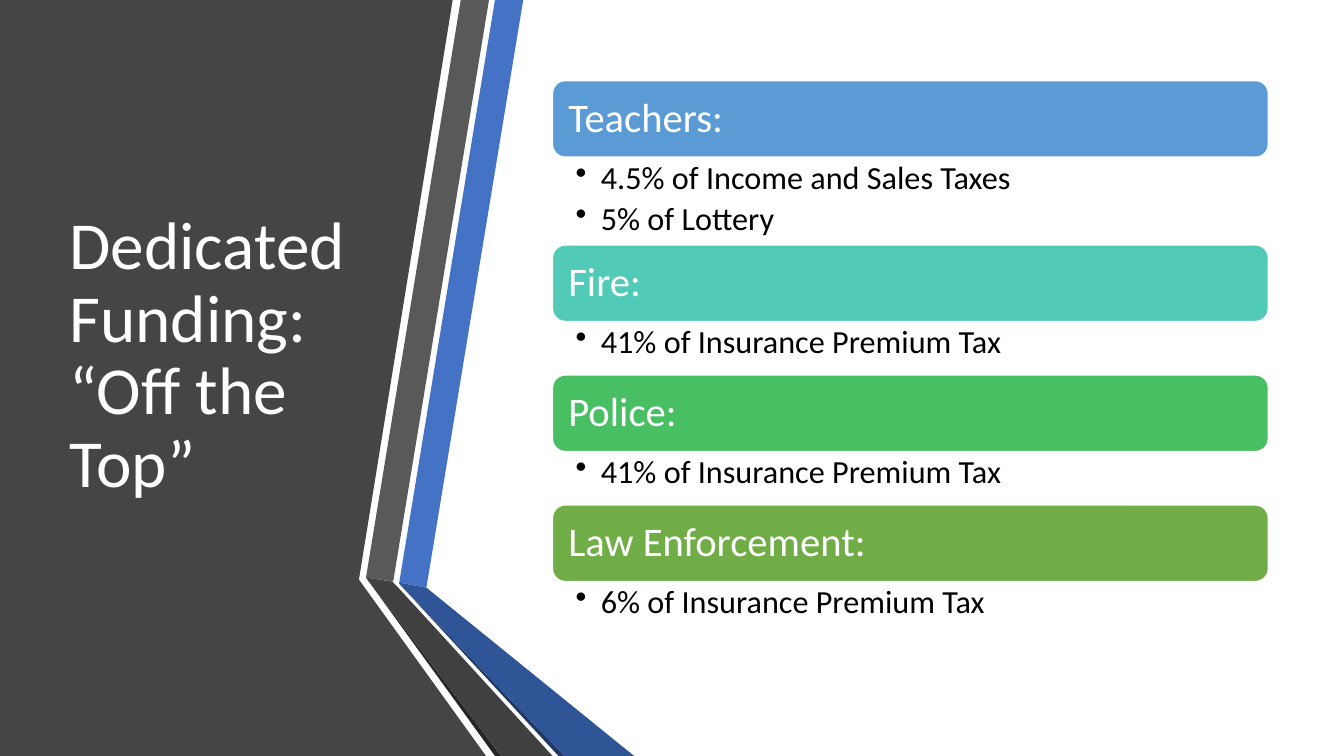
import pptx
import pptx.util
import pptx.dml.color
import pptx.enum.shapes
import pptx.enum.text
import pptx.oxml.ns
from lxml import etree

Inches = pptx.util.Inches
Pt = pptx.util.Pt

FONT = "Calibri"
COLORS = {
    "white": "FFFFFF", "black": "000000", "panel": "454545",
    "blue": "4472C4", "blue_fold": "2F5597", "blue_edge": "203864",
    "gray": "595959", "gray_fold": "404040", "gray_edge": "262626",
    "teachers": "5B9BD5", "fire": "52CAB8", "police": "49BF64", "law": "70AD47",
}

# Outlines of the side panel and its folded ribbons, in inches, back to front
PANEL = [("panel", [(0, 0), (4.49, 0), (3.56, 5.75), (4.82, 7.5), (0, 7.5)])]
RIBBONS = [
    ("blue", [(3.96, 5.78), (4.23, 5.83), (5.19, 0), (4.91, 0)]),
    ("gray", [(4.85, 0), (4.57, 0), (3.63, 5.73), (3.9, 5.77)]),
    ("gray_edge", [(3.63, 5.73), (4.91, 7.5), (4.97, 7.5)]),
    ("blue_edge", [(3.96, 5.79), (5.54, 7.5), (5.6, 7.5)]),
    ("blue_fold", [(3.96, 5.79), (5.6, 7.5), (6.29, 7.5), (4.23, 5.83), (3.96, 5.78)]),
    ("gray_fold", [(5.48, 7.5), (3.95, 5.83), (3.89, 5.77), (3.63, 5.73), (4.97, 7.5)]),
]

# Heading, colour, bullets, height of the bullet area
FUNDS = [
    ("Teachers:", "teachers", ["4.5% of Income and Sales Taxes", "5% of Lottery"], 0.87),
    ("Fire:", "fire", ["41% of Insurance Premium Tax"], 0.53),
    ("Police:", "police", ["41% of Insurance Premium Tax"], 0.53),
    ("Law Enforcement:", "law", ["6% of Insurance Premium Tax"], 0.53),
]
BAR_HEIGHT = 0.76


def rgb(name):
    return pptx.dml.color.RGBColor.from_string(COLORS[name])


def style_paragraph(paragraph, size, color):
    paragraph.font.name = FONT
    paragraph.font.size = Pt(size)
    paragraph.font.color.rgb = rgb(color)
    paragraph.alignment = pptx.enum.text.PP_ALIGN.LEFT
    paragraph.line_spacing = 0.9


def set_frame(frame, side, vertical, anchor):
    frame.word_wrap = True
    frame.auto_size = pptx.enum.text.MSO_AUTO_SIZE.NONE
    frame.margin_left = frame.margin_right = Inches(side)
    frame.margin_top = frame.margin_bottom = Inches(vertical)
    frame.vertical_anchor = anchor


def add_bullet(paragraph):
    properties = paragraph._p.get_or_add_pPr()
    properties.set("marL", str(Inches(0.25)))
    properties.set("indent", str(-Inches(0.25)))
    bullet = etree.SubElement(properties, pptx.oxml.ns.qn("a:buChar"))
    bullet.set("char", "•")
    # The bullet has to come before the default run properties
    defaults = properties.find(pptx.oxml.ns.qn("a:defRPr"))
    if defaults is not None:
        defaults.addprevious(bullet)


def add_outlines(shapes, outlines):
    for color, points in outlines:
        corners = [(Inches(x), Inches(y)) for x, y in points]
        builder = shapes.build_freeform(*corners[0])
        builder.add_line_segments(corners[1:], close=True)
        shape = builder.convert_to_shape()
        shape.shadow.inherit = False
        shape.fill.solid()
        shape.fill.fore_color.rgb = rgb(color)
        shape.line.fill.background()


def add_side_panel(slide):
    add_outlines(slide.shapes, PANEL)
    add_outlines(slide.shapes.add_group_shape().shapes, RIBBONS)


def place_title(slide, left, top, width, height):
    title = slide.shapes.title
    title.left, title.top = Inches(left), Inches(top)
    title.width, title.height = Inches(width), Inches(height)
    title.text_frame.text = "Dedicated Funding: “Off the Top”"
    set_frame(title.text_frame, 0.1, 0.05, pptx.enum.text.MSO_ANCHOR.MIDDLE)
    style_paragraph(title.text_frame.paragraphs[0], 48, "white")
    # Bring the title in front of the panel
    slide.shapes._spTree.append(title._element)


def add_heading_bar(slide, text, color, left, top, width):
    bar = slide.shapes.add_shape(
        pptx.enum.shapes.MSO_SHAPE.ROUNDED_RECTANGLE,
        Inches(left), Inches(top), Inches(width), Inches(BAR_HEIGHT))
    bar.shadow.inherit = False
    bar.fill.solid()
    bar.fill.fore_color.rgb = rgb(color)
    bar.line.color.rgb = rgb("white")
    bar.line.width = Pt(1)
    bar.text_frame.text = text
    set_frame(bar.text_frame, 0.12, 0.05, pptx.enum.text.MSO_ANCHOR.MIDDLE)
    style_paragraph(bar.text_frame.paragraphs[0], 29, "white")


def add_bullets(slide, lines, left, top, width, height):
    box = slide.shapes.add_textbox(
        Inches(left), Inches(top), Inches(width), Inches(height))
    box.text_frame.text = "\n".join(lines)
    set_frame(box.text_frame, 0.23, 0.04, pptx.enum.text.MSO_ANCHOR.TOP)
    for paragraph in box.text_frame.paragraphs:
        style_paragraph(paragraph, 23, "black")
        paragraph.space_after = Pt(4.6)
        add_bullet(paragraph)


def add_fund_list(slide, left, top, width):
    for heading, color, lines, height in FUNDS:
        add_heading_bar(slide, heading, color, left, top, width)
        add_bullets(slide, lines, left, top + BAR_HEIGHT, width, height)
        top += BAR_HEIGHT + height


def main():
    presentation = pptx.Presentation()
    presentation.slide_width = Inches(13.33)
    presentation.slide_height = Inches(7.5)
    slide = presentation.slides.add_slide(presentation.slide_layouts[5])
    add_side_panel(slide)
    place_title(slide, 0.59, 0.75, 3.04, 5.58)
    add_fund_list(slide, 5.48, 0.8, 7.1)
    presentation.save("out.pptx")


if __name__ == "__main__":
    main()
